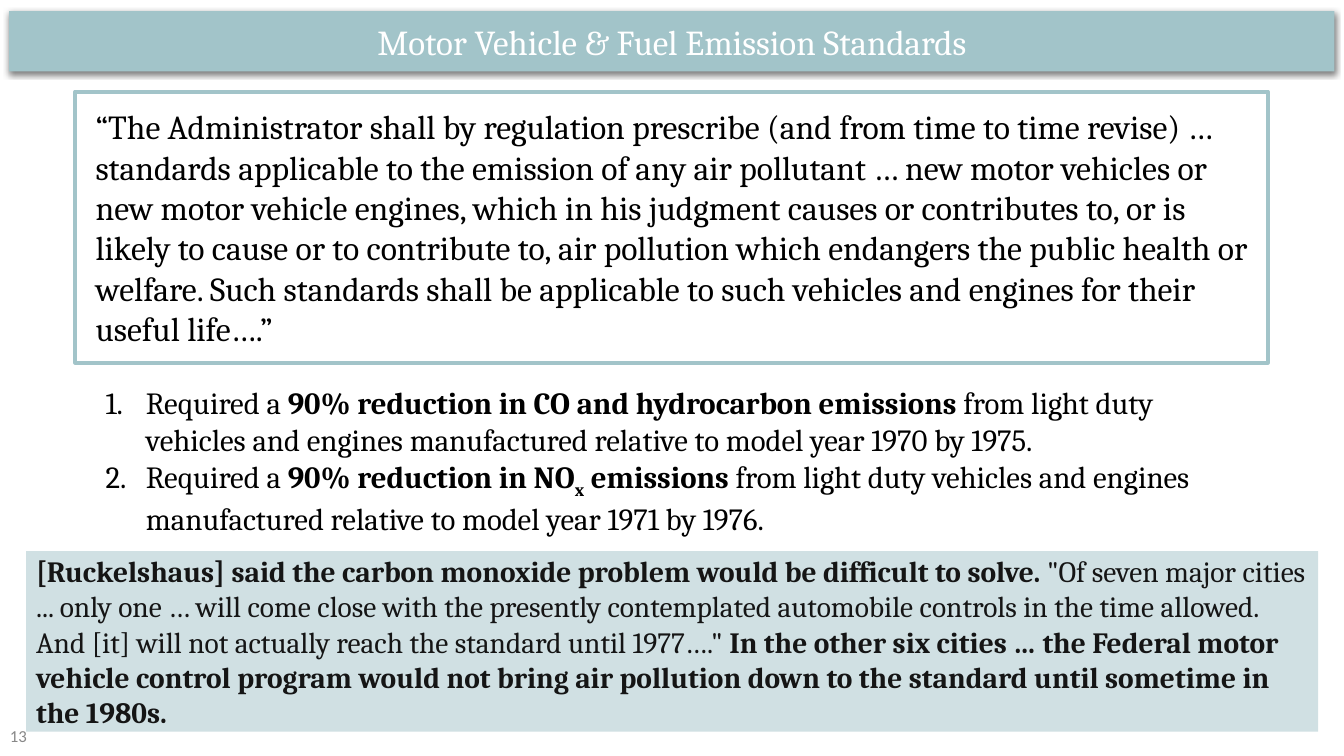
from lxml import etree
from pptx import Presentation
from pptx.dml.color import RGBColor
from pptx.enum.shapes import MSO_SHAPE as Shape
from pptx.enum.text import MSO_ANCHOR as Anchor, PP_ALIGN as Align
from pptx.oxml import parse_xml
from pptx.oxml.ns import nsdecls, qn
from pptx.util import Cm, Pt

TEAL = RGBColor(0xA2, 0xC4, 0xC9)
PALE_TEAL = RGBColor(0xD0, 0xE0, 0xE3)
WHITE = RGBColor(0xFF, 0xFF, 0xFF)
BLACK = RGBColor(0, 0, 0)
INK = RGBColor(0x15, 0x15, 0x15)
GREY = RGBColor(0x88, 0x88, 0x88)

PAGE_NUMBER = [["13"]]
TITLE = [["Motor Vehicle & Fuel Emission Standards"]]
STATUTE = [[
    "“The Administrator shall by regulation prescribe (and from time to time revise) … "
    "standards applicable to the emission of any air pollutant … new motor vehicles or "
    "new motor vehicle engines, which in his judgment causes or contributes to, or is "
    "likely to cause or to contribute to, air pollution which endangers the public health "
    "or welfare. Such standards shall be applicable to such vehicles and engines for "
    "their useful life….”"
]]
REQUIREMENTS = [
    ["Required a ",
     ("90% reduction in CO and hydrocarbon emissions ", "bold"),
     "from light duty vehicles and engines manufactured relative to model year 1970 by 1975."],
    ["Required a ",
     ("90% reduction in NO", "bold"),
     ("x", "bold subscript"),
     (" emissions ", "bold"),
     "from light duty vehicles and engines manufactured relative to model year 1971 by 1976."],
]
PRESS = [[
    ("[Ruckelshaus] said the carbon monoxide problem would be difficult to solve.", "bold"),
    " \"Of seven major cities ... only one … will come close with the presently contemplated "
    "automobile controls in the time allowed. And [it] will not actually reach the standard "
    "until 1977….\" ",
    ("In the other six cities … the Federal motor vehicle control program would not bring "
     "air pollution down to the standard until sometime in the 1980s.", "bold"),
]]


def number_paragraph(para):
    properties = para._p.get_or_add_pPr()
    properties.set("marL", str(Cm(1.27)))
    properties.set("indent", str(-Cm(1.02)))
    numbering = etree.SubElement(properties, qn("a:buAutoNum"))
    numbering.set("type", "arabicPeriod")


def add_text(page, paragraphs, area, *, size, color, font="Cambria", fill=None, line=None,
             align=Align.LEFT, anchor=Anchor.MIDDLE, side=0.25, edge=0.25, numbered=False):
    place = [Cm(length) for length in area]
    if fill or line:
        box = page.shapes.add_shape(Shape.RECTANGLE, *place)
        box.shadow.inherit = False
        if fill:
            box.fill.solid()
            box.fill.fore_color.rgb = fill
        else:
            box.fill.background()
        if line:
            box.line.color.rgb = line
            box.line.width = Pt(3)
        else:
            box.line.fill.background()
    else:
        box = page.shapes.add_textbox(*place)
    frame = box.text_frame
    frame.word_wrap = True
    frame.vertical_anchor = anchor
    frame.margin_left = frame.margin_right = Cm(side)
    frame.margin_top = frame.margin_bottom = Cm(edge)
    for index, parts in enumerate(paragraphs):
        para = frame.add_paragraph() if index else frame.paragraphs[0]
        para.alignment = align
        if numbered:
            number_paragraph(para)
        for part in parts:
            words, style = (part, "") if isinstance(part, str) else part
            span = para.add_run()
            span.text = words
            span.font.name = font
            span.font.size = Pt(size)
            span.font.color.rgb = color
            span.font.bold = "bold" in style
            if "subscript" in style:
                span.font._element.set("baseline", "-25000")
    return box


def drop_shadow(box):
    effects = box._element.spPr.find(qn("a:effectLst"))
    effects.append(parse_xml(
        f'<a:outerShdw {nsdecls("a")} blurRad="{Pt(4.5)}" dist="{Pt(1.5)}" dir="5400000" '
        'algn="bl" rotWithShape="0"><a:srgbClr val="000000"><a:alpha val="50000"/>'
        '</a:srgbClr></a:outerShdw>'))


def main():
    deck = Presentation()
    deck.slide_width, deck.slide_height = Cm(33.87), Cm(19.05)
    page = deck.slides.add_slide(deck.slide_layouts[6])
    add_text(page, PAGE_NUMBER, (0, 18.03, 7.62, 1.02), size=12, color=GREY,
             font="Calibri", edge=0.13)
    banner = add_text(page, TITLE, (0.23, 0.28, 33.4, 1.52), size=25, color=WHITE,
                      fill=TEAL, align=Align.CENTER)
    drop_shadow(banner)
    add_text(page, REQUIREMENTS, (1.9, 9.42, 30.05, 4.17), size=22, color=BLACK,
             anchor=Anchor.TOP, side=0.51, numbered=True)
    add_text(page, STATUTE, (1.9, 2.31, 30.05, 6.83), size=24, color=BLACK,
             line=TEAL, side=0.51)
    add_text(page, PRESS, (0.66, 13.89, 32.56, 4.55), size=21, color=INK, fill=PALE_TEAL)
    deck.save("out.pptx")


if __name__ == "__main__":
    main()
